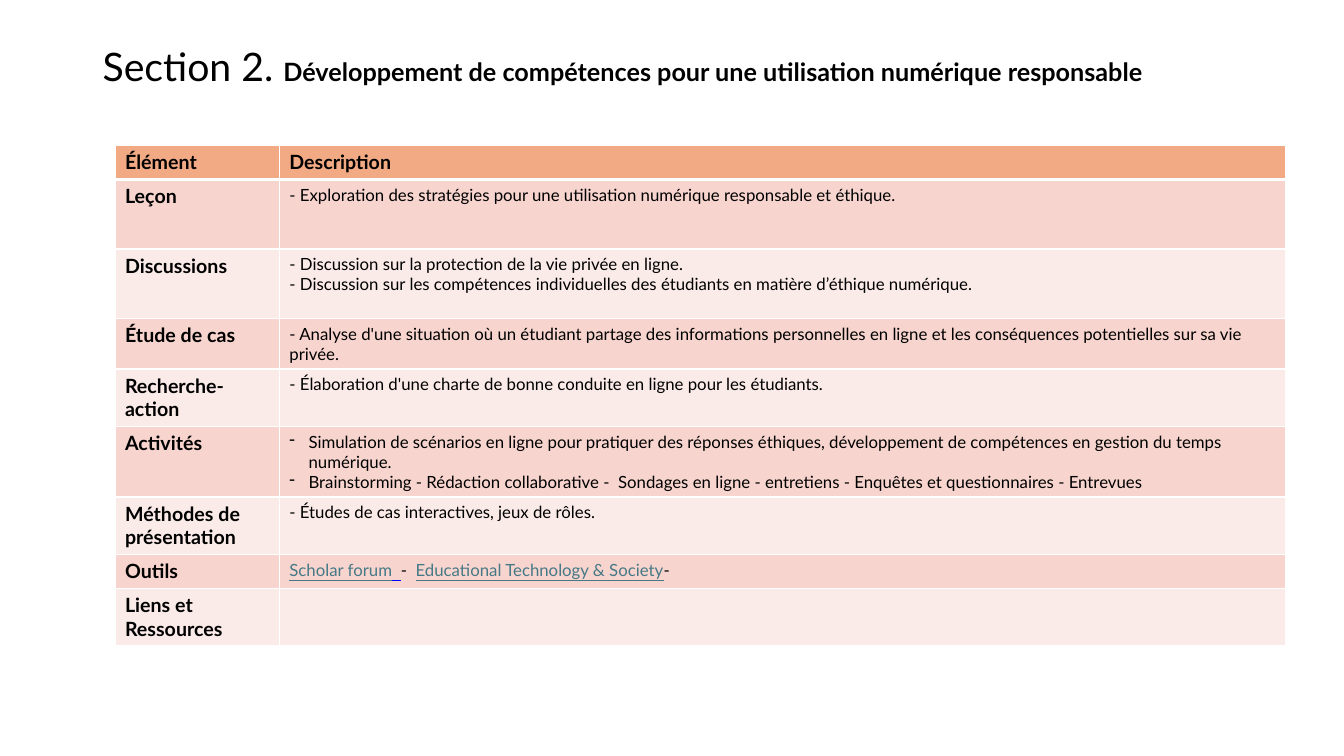
from lxml import etree
from pptx import Presentation
from pptx.dml.color import RGBColor
from pptx.enum.text import MSO_ANCHOR
from pptx.oxml.ns import qn
from pptx.util import Inches, Pt

COLORS = {
    "text": "000000", "link": "467886", "gap": "0000FF", "border": "FFFFFF",
    "header": "F2AA84", "odd": "F7D5CE", "even": "FBEBE8",
}


def add_run(p, text, size, bold=False, color="text", underline=False):
    r = p.add_run()
    r.text = text
    r.font.name = "Lato"
    r.font.size = Pt(size)
    r.font.bold = bold
    r.font.underline = underline
    r.font.color.rgb = RGBColor.from_string(COLORS[color])


def add_border(cell, side, width):
    ln = etree.SubElement(cell._tc.get_or_add_tcPr(), qn(f"a:ln{side}"), w=str(Pt(width)))
    fill = etree.SubElement(ln, qn("a:solidFill"))
    etree.SubElement(fill, qn("a:srgbClr"), val=COLORS["border"])


prs = Presentation()
prs.slide_width = Inches(13.33)
prs.slide_height = Inches(7.5)
s = prs.slides.add_slide(prs.slide_layouts[6])

tf = s.shapes.add_textbox(Inches(0.92), Inches(0.15), Inches(11.5), Inches(1.06)).text_frame
tf.word_wrap = True
tf.vertical_anchor = MSO_ANCHOR.MIDDLE
p = tf.paragraphs[0]
p.line_spacing = 0.9
add_run(p, "Section 2. ", 28)
add_run(p, "Développement de compétences pour une utilisation numérique responsable", 18, bold=True)

rows = [
    ("Élément", 0.34, ["Description"]),
    ("Leçon", 0.69, ["- Exploration des stratégies pour une utilisation numérique responsable et éthique."]),
    ("Discussions", 0.69, [
        "- Discussion sur la protection de la vie privée en ligne.",
        "- Discussion sur les compétences individuelles des étudiants en matière d’éthique numérique.",
    ]),
    ("Étude de cas", 0.5, [
        "- Analyse d'une situation où un étudiant partage des informations personnelles en ligne "
        "et les conséquences potentielles sur sa vie privée.",
    ]),
    ("Recherche-action", 0.57, [
        "- Élaboration d'une charte de bonne conduite en ligne pour les étudiants.",
    ]),
    ("Activités", 0.7, [
        "Simulation de scénarios en ligne pour pratiquer des réponses éthiques, "
        "développement de compétences en gestion du temps numérique.",
        "Brainstorming - Rédaction collaborative -  Sondages en ligne - entretiens - "
        "Enquêtes et questionnaires - Entrevues",
    ]),
    ("Méthodes de présentation", 0.57, ["- Études de cas interactives, jeux de rôles."]),
    ("Outils", 0.34, []),
    ("Liens et Ressources", 0.57, []),
]
tools = [
    ("Scholar forum", "link", True),
    ("  ", "gap", True),
    ("-  ", "text", False),
    ("Educational Technology & Society", "link", True),
    ("-", "text", False),
]

table = s.shapes.add_table(
    len(rows), 2, Inches(1.14), Inches(1.44), Inches(11.61), Inches(4.97)
).table
table.columns[0].width = Inches(1.63)
table.columns[1].width = Inches(9.98)

for i, (label, height, lines) in enumerate(rows):
    table.rows[i].height = Inches(height)
    header = i == 0
    band = "header" if header else "odd" if i % 2 else "even"
    for cell in table.rows[i].cells:
        for side in "LRTB":
            thick = (i, side) in [(0, "B"), (1, "T")]
            add_border(cell, side, 3 if thick else 1)
        cell.fill.solid()
        cell.fill.fore_color.rgb = RGBColor.from_string(COLORS[band])

    add_run(table.cell(i, 0).text_frame.paragraphs[0], label, 14, bold=True)
    tf = table.cell(i, 1).text_frame
    for j, line in enumerate(lines):
        p = tf.paragraphs[0] if j == 0 else tf.add_paragraph()
        if label == "Activités":
            pPr = p._p.get_or_add_pPr()
            pPr.set("marL", str(Inches(0.19)))
            pPr.set("indent", str(-Inches(0.19)))
            etree.SubElement(pPr, qn("a:buChar"), char="-")
        add_run(p, line, 14 if header else 12, bold=header)
    if label == "Outils":
        for text, color, underline in tools:
            add_run(tf.paragraphs[0], text, 12, color=color, underline=underline)

prs.save("out.pptx")
